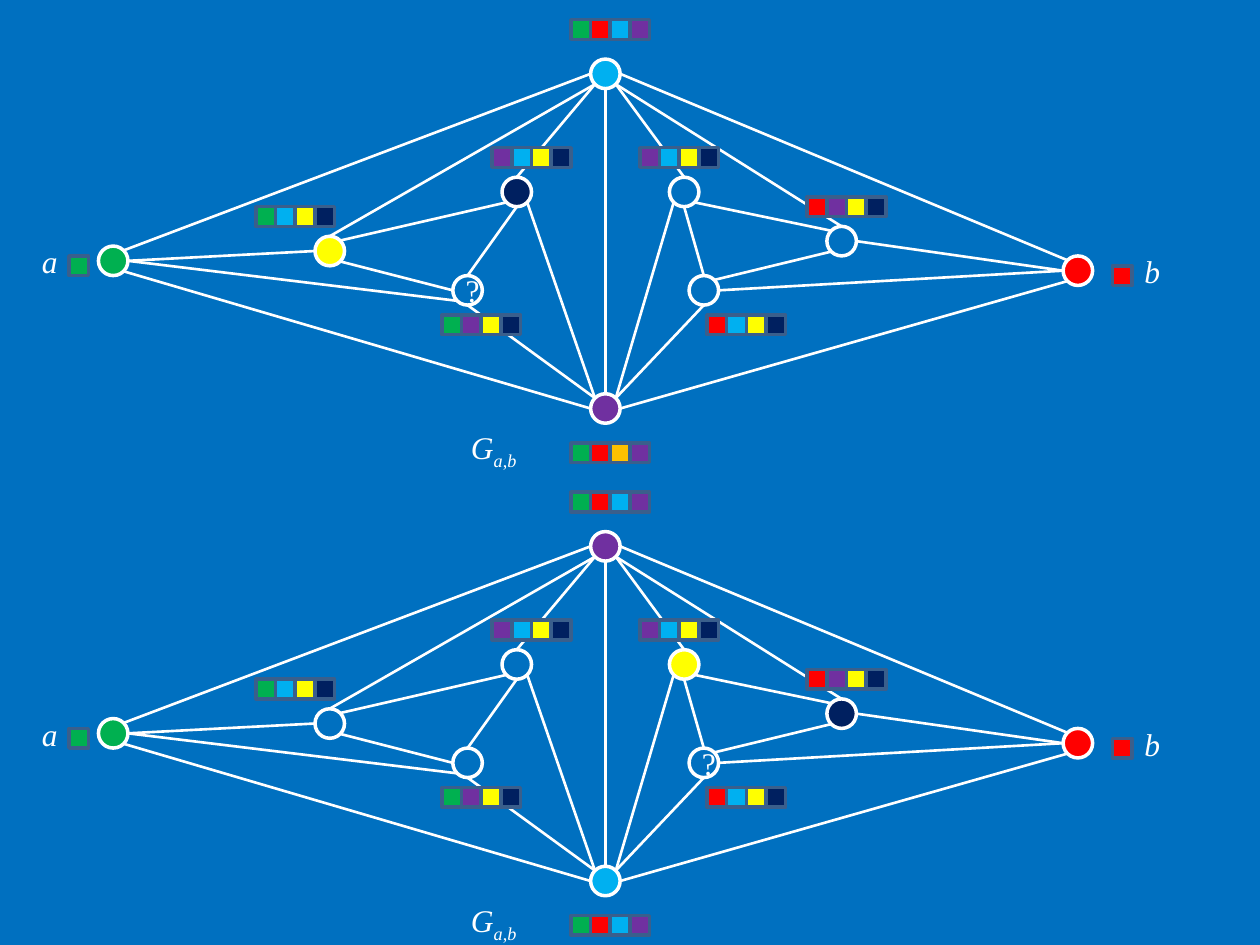
import math

import lxml.etree
import pptx
import pptx.dml.color
import pptx.enum.shapes
import pptx.enum.text
import pptx.oxml.ns
import pptx.util

Pt = pptx.util.Pt
SHAPES = pptx.enum.shapes.MSO_SHAPE

COLOURS = {
    "back": "0070C0", "white": "FFFFFF", "frame": "3A5F8C",
    "green": "00B050", "red": "FF0000", "sky": "00B0F0", "purple": "7030A0",
    "yellow": "FFFF00", "navy": "002060", "orange": "FFC000",
}
NODE_SIZE = 16.88
SWATCH_SIZE = 11.25
GRAPH_PITCH = 270

# Upper left corner of each vertex, relative to its graph
NODES = {
    "top": (337.5, 33.75), "bottom": (337.5, 225),
    "a": (56.25, 140.63), "b": (607.5, 146.25),
    "left": (180, 135), "upper_left": (286.88, 101.25), "lower_left": (258.75, 157.5),
    "right": (472.5, 129.38), "upper_right": (382.5, 101.25), "lower_right": (393.75, 157.5),
}

# Each edge runs between compass points on the rims of two vertices
EDGES = [
    ("bottom", "E", "b", "SW"), ("b", "NW", "top", "E"),
    ("top", "W", "a", "NE"), ("bottom", "W", "a", "SE"),
    ("bottom", "N", "top", "S"),
    ("right", "SW", "lower_right", "NE"), ("right", "NW", "upper_right", "SE"),
    ("upper_right", "N", "top", "SE"), ("right", "N", "top", "SE"),
    ("b", "W", "lower_right", "E"), ("b", "W", "right", "E"),
    ("bottom", "NE", "upper_right", "SW"), ("lower_right", "S", "bottom", "NE"),
    ("lower_right", "N", "upper_right", "S"),
    ("left", "W", "a", "E"), ("lower_left", "W", "left", "SE"),
    ("upper_left", "SW", "left", "NE"), ("top", "SW", "upper_left", "N"),
    ("top", "SW", "left", "N"), ("lower_left", "N", "upper_left", "S"),
    ("bottom", "NW", "upper_left", "SE"), ("lower_left", "SW", "a", "E"),
    ("bottom", "NW", "lower_left", "S"),
]
COMPASS = ["E", "SE", "S", "SW", "W", "NW", "N", "NE"]

# Colour lists: left, top and the allowed colours
LISTS = [
    (326.25, 11.25, "green red sky purple"),
    (146.25, 118.13, "green sky yellow navy"),
    (281.25, 84.38, "purple sky yellow navy"),
    (365.63, 84.38, "purple sky yellow navy"),
    (252.5, 180, "green purple yellow navy"),
    (404, 180, "red sky yellow navy"),
    (461.25, 112.5, "red purple yellow navy"),
    (39.38, 146.25, "green"),
    (635.63, 151.88, "red"),
]

# What differs between the two graphs: chosen colours, open vertex, bottom list
GRAPHS = [
    ({"top": "sky", "bottom": "purple", "left": "yellow", "upper_left": "navy"},
     "lower_left", "green red orange purple"),
    ({"top": "purple", "bottom": "sky", "upper_right": "yellow", "right": "navy"},
     "lower_right", "green red sky purple"),
]


class Painter:
    def __init__(self, slide):
        self.slide = slide
        self.font = "Times New Roman"
        self.size = 18
        self.origin = 0  # top of the current graph

    def colour(self, name):
        return pptx.dml.color.RGBColor.from_string(COLOURS[name])

    def background(self, name):
        fill = self.slide.background.fill
        fill.solid()
        fill.fore_color.rgb = self.colour(name)

    def add_span(self, para, text, italic=None, subscript=False):
        span = para.add_run()
        span.text = text
        span.font.name = self.font
        span.font.size = Pt(self.size)
        span.font.italic = italic
        span.font.color.rgb = self.colour("white")
        if subscript:
            span._r.get_or_add_rPr().set("baseline", "-25000")

    def shape(self, kind, left, top, size, fill, line):
        shape = self.slide.shapes.add_shape(
            kind, Pt(left), Pt(top + self.origin), Pt(size), Pt(size))
        shape.shadow.inherit = False
        shape.fill.solid()
        shape.fill.fore_color.rgb = self.colour(fill)
        shape.line.color.rgb = self.colour(line)
        shape.line.width = Pt(2)
        return shape

    def node(self, name, fill, text=None):
        left, top = NODES[name]
        circle = self.shape(SHAPES.OVAL, left, top, NODE_SIZE, fill, "white")
        if text:
            circle.text_frame.vertical_anchor = pptx.enum.text.MSO_ANCHOR.MIDDLE
            para = circle.text_frame.paragraphs[0]
            para.alignment = pptx.enum.text.PP_ALIGN.CENTER
            self.add_span(para, text)

    def rim(self, name, direction):
        left, top = NODES[name]
        angle = COMPASS.index(direction) * math.pi / 4
        radius = NODE_SIZE / 2
        return (Pt(left + radius + radius * math.cos(angle)),
                Pt(top + self.origin + radius + radius * math.sin(angle)))

    def edge(self, start, start_side, end, end_side):
        connector = self.slide.shapes.add_connector(
            pptx.enum.shapes.MSO_CONNECTOR.STRAIGHT,
            *self.rim(start, start_side), *self.rim(end, end_side))
        connector.line.color.rgb = self.colour("white")
        connector.line.width = Pt(1.5)
        lxml.etree.SubElement(connector._element.spPr, pptx.oxml.ns.qn("a:effectLst"))

    def colour_list(self, left, top, names):
        for index, name in enumerate(names.split()):
            self.shape(SHAPES.RECTANGLE, left + index * SWATCH_SIZE, top,
                       SWATCH_SIZE, name, "frame")

    def label(self, left, top, width, text, subscript="", wrap=True):
        box = self.slide.shapes.add_textbox(
            Pt(left), Pt(top + self.origin), Pt(width), Pt(29))
        frame = box.text_frame
        frame.word_wrap = wrap
        frame.auto_size = pptx.enum.text.MSO_AUTO_SIZE.SHAPE_TO_FIT_TEXT
        para = frame.paragraphs[0]
        self.add_span(para, text, italic=True)
        for letter in subscript:
            self.add_span(para, letter, italic=letter.isalpha(), subscript=True)


def main():
    deck = pptx.Presentation()
    deck.slide_width, deck.slide_height = Pt(720), Pt(540)
    page = deck.slides.add_slide(deck.slide_layouts[6])
    painter = Painter(page)
    painter.background("back")

    for index, (chosen, open_node, bottom_list) in enumerate(GRAPHS):
        painter.origin = index * GRAPH_PITCH
        fills = {"a": "green", "b": "red", **chosen}

        # Vertices and edges
        for name in NODES:
            painter.node(name, fills.get(name, "back"), "?" if name == open_node else None)
        for edge in EDGES:
            painter.edge(*edge)

        # Colour lists
        for colour_list in LISTS + [(326.25, 253.13, bottom_list)]:
            painter.colour_list(*colour_list)

        # Labels
        painter.label(16.88, 134.75, 33.75, "a")
        painter.label(646.88, 140.5, 33.75, "b")
        painter.label(262, 241.25, 42.5, "G", "a,b", wrap=False)

    deck.save("out.pptx")


if __name__ == "__main__":
    main()
